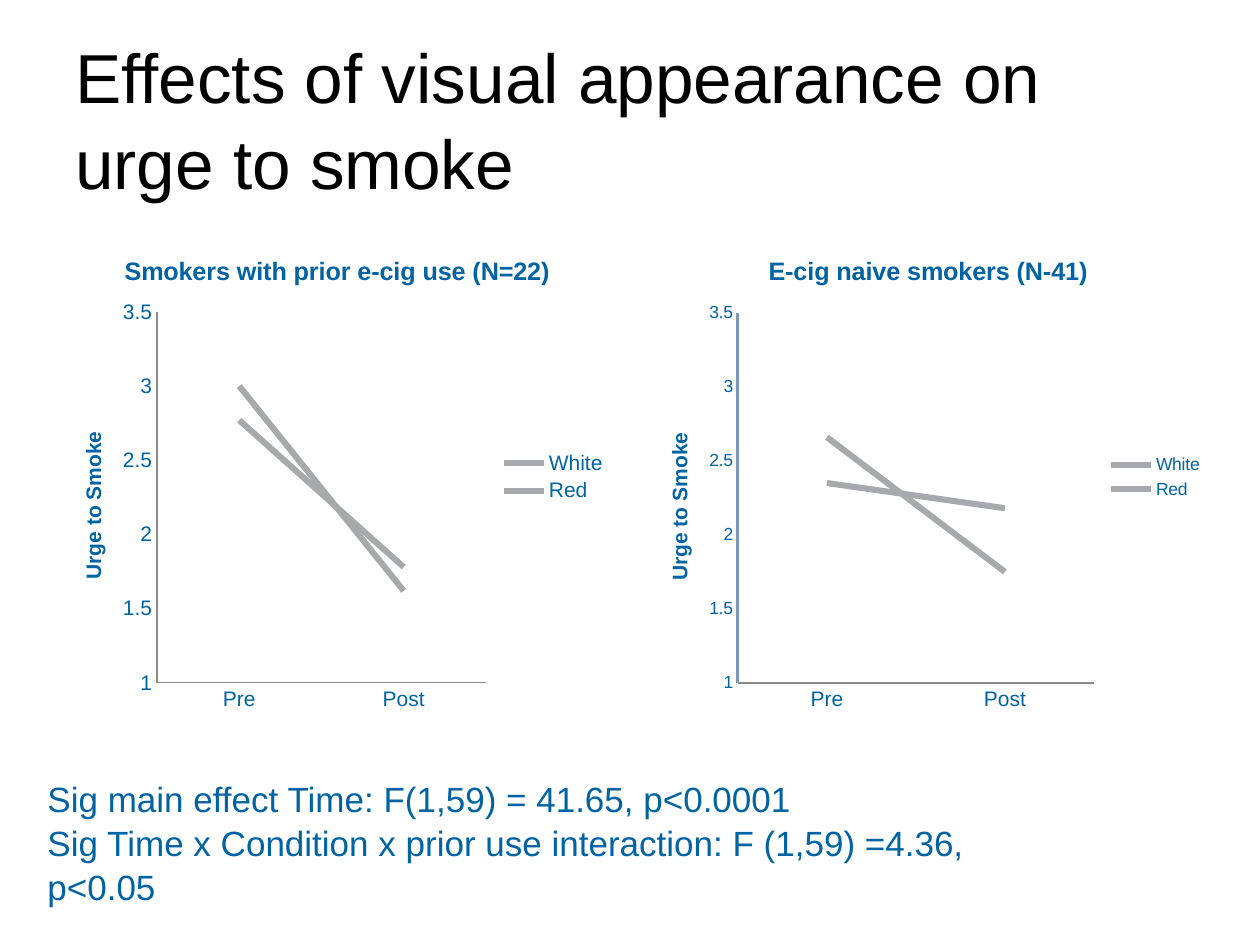
from dataclasses import dataclass

from pptx import Presentation
from pptx.chart.data import CategoryChartData
from pptx.dml.color import RGBColor
from pptx.enum.chart import XL_CHART_TYPE as ChartType, XL_LEGEND_POSITION as LegendPosition
from pptx.enum.chart import XL_TICK_MARK as TickMark
from pptx.enum.text import MSO_ANCHOR as Anchor
from pptx.oxml import parse_xml
from pptx.oxml.ns import nsdecls, qn
from pptx.util import Emu, Pt

EMU_PER_PX = 914400 / 126


@dataclass(frozen=True)
class Theme:
    font: str = "Arial"
    heading: RGBColor = RGBColor(0x00, 0x00, 0x00)
    text: RGBColor = RGBColor(0x00, 0x63, 0xA4)
    series: RGBColor = RGBColor(0xA7, 0xA9, 0xAC)
    thin_axis: RGBColor = RGBColor(0x8A, 0x8A, 0x8A)
    strong_axis: RGBColor = RGBColor(0x80, 0x97, 0xB9)
    heading_size: float = 39.6
    findings_size: float = 20
    chart_title_size: float = 14.4
    label_size: float = 12
    small_label_size: float = 10
    line_spacing: float = 1.04


THEME = Theme()


def px(length):
    return Emu(round(length * EMU_PER_PX))


def style_font(font, size, color, bold=False):
    font.name = THEME.font
    font.size = Pt(size)
    font.bold = bold
    font.color.rgb = color


def add_text(slide, box, lines, size, color, anchor=Anchor.TOP):
    frame = slide.shapes.add_textbox(*map(px, box)).text_frame
    frame.word_wrap = True
    frame.vertical_anchor = anchor
    frame.text = "\n".join(lines)
    for paragraph in frame.paragraphs:
        paragraph.line_spacing = THEME.line_spacing
        for run in paragraph.runs:
            style_font(run.font, size, color)


def set_title(titled, text, size):
    frame = titled.text_frame
    frame.text = text
    style_font(frame.paragraphs[0].runs[0].font, size, THEME.text, bold=True)


def style_axis(axis, size, color, width):
    axis.has_major_gridlines = False
    axis.major_tick_mark = axis.minor_tick_mark = TickMark.NONE
    axis.format.line.color.rgb = color
    axis.format.line.width = Pt(width)
    style_font(axis.tick_labels.font, size, THEME.text)


def place_plot(chart, box, plot):
    left, top, width, height = box
    x, y, w, h = plot
    fractions = {
        "x": (x - left) / width,
        "y": (y - top) / height,
        "w": w / width,
        "h": h / height,
    }
    modes = '<c:layoutTarget val="inner"/><c:xMode val="edge"/><c:yMode val="edge"/>'
    values = "".join(f'<c:{key} val="{value:.4f}"/>' for key, value in fractions.items())
    plot_area = chart.plots[0]._element.getparent()
    for layout in plot_area.findall(qn("c:layout")):
        plot_area.remove(layout)
    plot_area.insert(0, parse_xml(
        f'<c:layout {nsdecls("c")}><c:manualLayout>{modes}{values}</c:manualLayout></c:layout>'
    ))


def add_urge_chart(slide, box, plot, title, urges, label_size, axis_color, axis_width):
    data = CategoryChartData()
    data.categories = ["Pre", "Post"]
    for condition, values in urges.items():
        data.add_series(condition, values)
    chart = slide.shapes.add_chart(ChartType.LINE, *map(px, box), data).chart
    style_font(chart.font, label_size, THEME.text)
    chart.has_title = True
    set_title(chart.chart_title, title, THEME.chart_title_size)
    chart.chart_title.include_in_layout = False

    chart.has_legend = True
    chart.legend.position = LegendPosition.RIGHT
    chart.legend.include_in_layout = False
    style_font(chart.legend.font, label_size, THEME.text)

    style_axis(chart.category_axis, THEME.label_size, THEME.thin_axis, 0.75)
    urge_axis = chart.value_axis
    style_axis(urge_axis, label_size, axis_color, axis_width)
    urge_axis.minimum_scale = 1
    urge_axis.maximum_scale = 3.5
    urge_axis.major_unit = 0.5
    urge_axis.tick_labels.number_format = "General"
    urge_axis.tick_labels.number_format_is_linked = False
    set_title(urge_axis.axis_title, "Urge to Smoke", THEME.label_size)

    chart.plots[0].vary_by_categories = False
    for series in chart.plots[0].series:
        series.smooth = False
        series.format.line.color.rgb = THEME.series
        series.format.line.width = Pt(3.5)
    place_plot(chart, box, plot)


def main():
    deck = Presentation()
    deck.slide_width, deck.slide_height = px(1260), px(945)
    slide = deck.slides.add_slide(deck.slide_layouts[6])

    add_text(slide, (63, 38, 1134, 158), ["Effects of visual appearance on urge to smoke"],
             THEME.heading_size, THEME.heading, Anchor.MIDDLE)
    add_urge_chart(slide, (54, 234, 566, 486), (157, 312, 329, 371),
                   "Smokers with prior e-cig use (N=22)",
                   {"White": (2.77, 1.78), "Red": (3, 1.62)},
                   THEME.label_size, THEME.thin_axis, 0.75)
    add_urge_chart(slide, (640, 234, 576, 486), (738, 313, 356, 370),
                   "E-cig naive smokers (N-41)",
                   {"White": (2.66, 1.75), "Red": (2.35, 2.18)},
                   THEME.small_label_size, THEME.strong_axis, 1.75)
    add_text(slide, (35, 770, 1002, 140),
             ["Sig main effect Time: F(1,59) = 41.65, p<0.0001",
              "Sig Time x Condition x prior use interaction: F (1,59) =4.36, p<0.05"],
             THEME.findings_size, THEME.text)

    deck.save("out.pptx")


if __name__ == "__main__":
    main()
